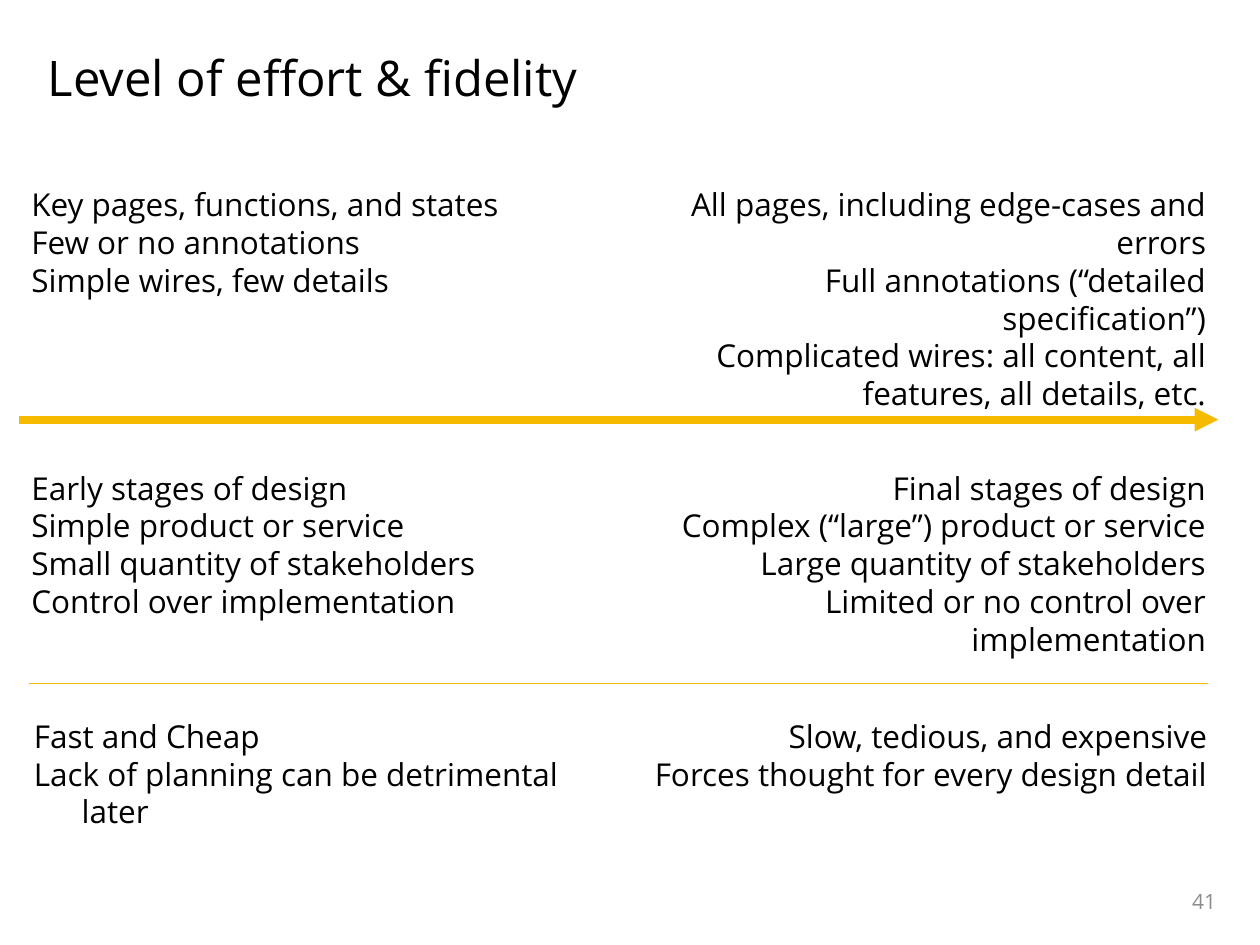
from dataclasses import dataclass

from lxml import etree
from pptx import Presentation
from pptx.dml.color import RGBColor
from pptx.enum.dml import MSO_LINE
from pptx.enum.shapes import MSO_CONNECTOR
from pptx.enum.text import MSO_ANCHOR, PP_ALIGN
from pptx.oxml.ns import qn
from pptx.util import Inches, Pt

LEFT, RIGHT = PP_ALIGN.LEFT, PP_ALIGN.RIGHT
TOP, MIDDLE = MSO_ANCHOR.TOP, MSO_ANCHOR.MIDDLE
STRAIGHT = MSO_CONNECTOR.STRAIGHT
DOTTED = MSO_LINE.ROUND_DOT
TITLE_ONLY = 5


@dataclass(frozen=True)
class Theme:
    font: str = "Open Sans"
    ink: RGBColor = RGBColor(0x00, 0x00, 0x00)
    grey: RGBColor = RGBColor(0x8C, 0x8C, 0x8C)
    gold: RGBColor = RGBColor(0xF6, 0xBB, 0x00)
    title_size: int = 28
    body_size: int = 18
    number_size: int = 12


THEME = Theme()
HANGING = 0.38

# Each column: left, top, width, height, alignment, lines
COLUMNS = [
    (0.15, 1.42, 4.85, 1.31, LEFT, [
        "Key pages, functions, and states",
        "Few or no annotations",
        "Simple wires, few details",
    ]),
    (4.82, 1.42, 4.85, 1.62, RIGHT, [
        "All pages, including edge-cases and errors",
        "Full annotations (“detailed specification”)",
        "Complicated wires: all content, all features, all details, etc.",
    ]),
    (0.15, 3.67, 3.93, 1.31, LEFT, [
        "Early stages of design",
        "Simple product or service",
        "Small quantity of stakeholders",
        "Control over implementation",
    ]),
    (4.82, 3.67, 4.85, 1.62, RIGHT, [
        "Final stages of design",
        "Complex (“large”) product or service",
        "Large quantity of stakeholders",
        "Limited or no control over implementation",
    ]),
    (0.17, 5.64, 4.83, 0.71, LEFT, [
        "Fast and Cheap",
        "Lack of planning can be detrimental later",
    ]),
    (4.83, 5.64, 4.85, 0.71, RIGHT, [
        "Slow, tedious, and expensive",
        "Forces thought for every design detail",
    ]),
]


def style_para(para, size, color, align):
    para.alignment = align
    para.font.name = THEME.font
    para.font.size = Pt(size)
    para.font.color.rgb = color


def set_title(page, text):
    title = page.shapes.title
    title.left, title.top = Inches(0.28), Inches(0.33)
    title.width, title.height = Inches(9.47), Inches(1.08)
    title.text_frame.text = text
    title.text_frame.vertical_anchor = TOP
    style_para(title.text_frame.paragraphs[0], THEME.title_size, THEME.ink, LEFT)


def add_text(page, left, top, width, height, align, lines,
             size=THEME.body_size, color=THEME.ink, anchor=TOP, hanging=0):
    box = page.shapes.add_textbox(
        Inches(left), Inches(top), Inches(width), Inches(height))
    frame = box.text_frame
    frame.word_wrap = True
    frame.vertical_anchor = anchor
    frame.text = "\n".join(lines)
    for para in frame.paragraphs:
        if hanging:
            properties = para._p.get_or_add_pPr()
            properties.set("marL", str(Inches(hanging)))
            properties.set("indent", str(-Inches(hanging)))
        style_para(para, size, color, align)


def add_rule(page, start, end, y, weight):
    rule = page.shapes.add_connector(
        STRAIGHT, Inches(start), Inches(y), Inches(end), Inches(y))
    rule.line.color.rgb = THEME.gold
    rule.line.width = Pt(weight)
    etree.SubElement(rule._element.spPr, qn("a:effectLst"))
    return rule


def add_arrowhead(rule):
    outline = rule.line._get_or_add_ln()
    etree.SubElement(outline, qn("a:tailEnd"), type="triangle")


def main():
    deck = Presentation()
    deck.slide_width, deck.slide_height = Inches(10), Inches(7.5)
    page = deck.slides.add_slide(deck.slide_layouts[TITLE_ONLY])

    set_title(page, "Level of effort & fidelity")
    add_text(page, 7.42, 6.95, 2.33, 0.4, RIGHT, ["41"],
             THEME.number_size, THEME.grey, MIDDLE)

    effort_arrow = add_rule(page, 0.15, 9.67, 3.33, 4.5)
    add_arrowhead(effort_arrow)
    divider = add_rule(page, 0.23, 9.58, 5.42, 0.25)
    divider.line.dash_style = DOTTED

    for column in COLUMNS:
        add_text(page, *column, hanging=HANGING)

    deck.save("out.pptx")


if __name__ == "__main__":
    main()
